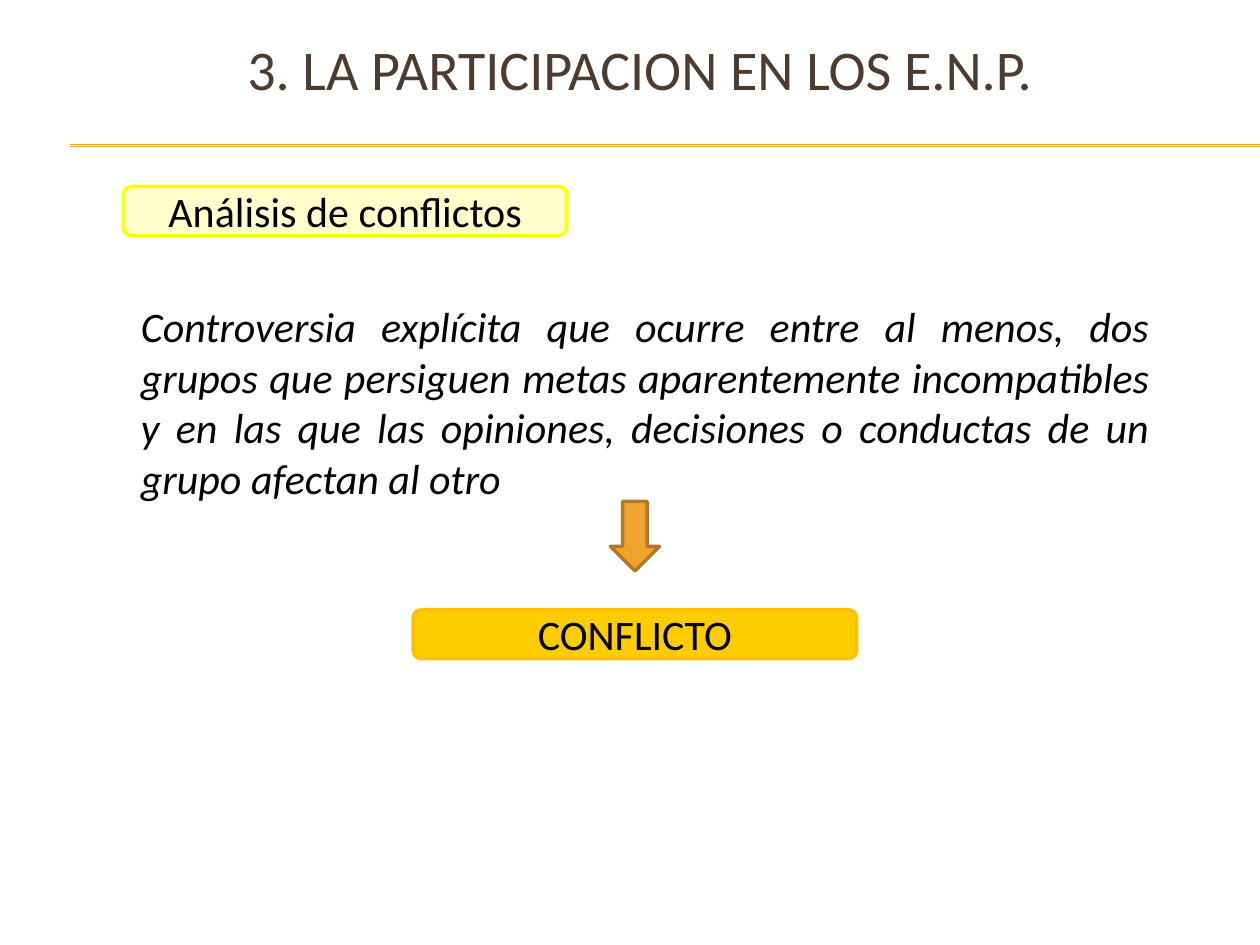
from pptx import Presentation
from pptx.dml.color import RGBColor
from pptx.enum.shapes import MSO_CONNECTOR, MSO_SHAPE as SHAPE
from pptx.enum.text import MSO_ANCHOR as ANCHOR, PP_ALIGN as ALIGN
from pptx.oxml.ns import qn
from pptx.util import Cm, Pt
from lxml.etree import SubElement

# Content; all lengths in centimetres
WIDTH, HEIGHT = 25.4, 19.05
FONT = "Calibri"
BLACK, BROWN, ORANGE = "000000", "4E3B30", "F0A22E"

TITLE = "3. LA PARTICIPACION EN LOS E.N.P."
DEFINITION = (
    "Controversia explícita que ocurre entre al menos, dos grupos que persiguen "
    "metas aparentemente incompatibles y en las que las opiniones, decisiones o "
    "conductas de un grupo afectan al otro"
)
RULE_LEFT, RULE_TOPS = 1.42, (2.92, 2.95)
LABEL_SIZE = (8.94, 0.99)
LABELS = [  # text, left, top, fill, line
    ("Análisis de conflictos", 2.49, 3.76, "FFFFCC", "FFFF00"),
    ("CONFLICTO", 8.33, 12.29, "FFCC00", "FFC000"),
]
ARROW_SIZE, ARROW_TOP = (0.99, 1.4), 10.11


def rgb(color):
    return RGBColor.from_string(color)


def write(sp, text, size, color=BLACK, align=ALIGN.CENTER,
          anchor=ANCHOR.MIDDLE, italic=False):
    tf = sp.text_frame
    tf.word_wrap = True
    tf.vertical_anchor = anchor
    p = tf.paragraphs[0]
    p.alignment = align
    r = p.add_run()
    r.text = text
    r.font.name, r.font.size, r.font.italic = FONT, Pt(size), italic
    r.font.color.rgb = rgb(color)


def add_box(slide, *box):
    return slide.shapes.add_textbox(*map(Cm, box))


def add_shape(slide, kind, box, fill, line):
    sp = slide.shapes.add_shape(kind, *map(Cm, box))
    sp.shadow.inherit = False
    sp.fill.solid()
    sp.fill.fore_color.rgb = rgb(fill)
    sp.line.color.rgb = rgb(line)
    sp.line.width = Pt(2)
    return sp


def add_rule(slide, top):
    line = slide.shapes.add_connector(
        MSO_CONNECTOR.STRAIGHT, Cm(RULE_LEFT), Cm(top), Cm(WIDTH), Cm(top))
    line.line.color.rgb = rgb(ORANGE)
    line.line.width = Pt(0.75)
    SubElement(line._element.spPr, qn("a:effectLst"))


def main():
    prs = Presentation()
    prs.slide_width, prs.slide_height = Cm(WIDTH), Cm(HEIGHT)
    slide = prs.slides.add_slide(prs.slide_layouts[6])

    # Title and the double rule below it
    for top in RULE_TOPS:
        add_rule(slide, top)
    write(add_box(slide, 0.84, 0.2, 24.13, 2.34), TITLE, 32, BROWN)

    # Definition
    write(add_box(slide, 2.59, 5.94, 20.83, 4.37), DEFINITION, 24,
          align=ALIGN.JUSTIFY, anchor=ANCHOR.TOP, italic=True)

    # Labels
    for text, left, top, fill, line in LABELS:
        sp = add_shape(slide, SHAPE.ROUNDED_RECTANGLE,
                       (left, top, *LABEL_SIZE), fill, line)
        write(sp, text, 24)

    # Arrow, centred over the last label
    arrow_left = LABELS[-1][1] + (LABEL_SIZE[0] - ARROW_SIZE[0]) / 2
    add_shape(slide, SHAPE.DOWN_ARROW,
              (arrow_left, ARROW_TOP, *ARROW_SIZE), ORANGE, "B27822")

    prs.save("out.pptx")


if __name__ == "__main__":
    main()
